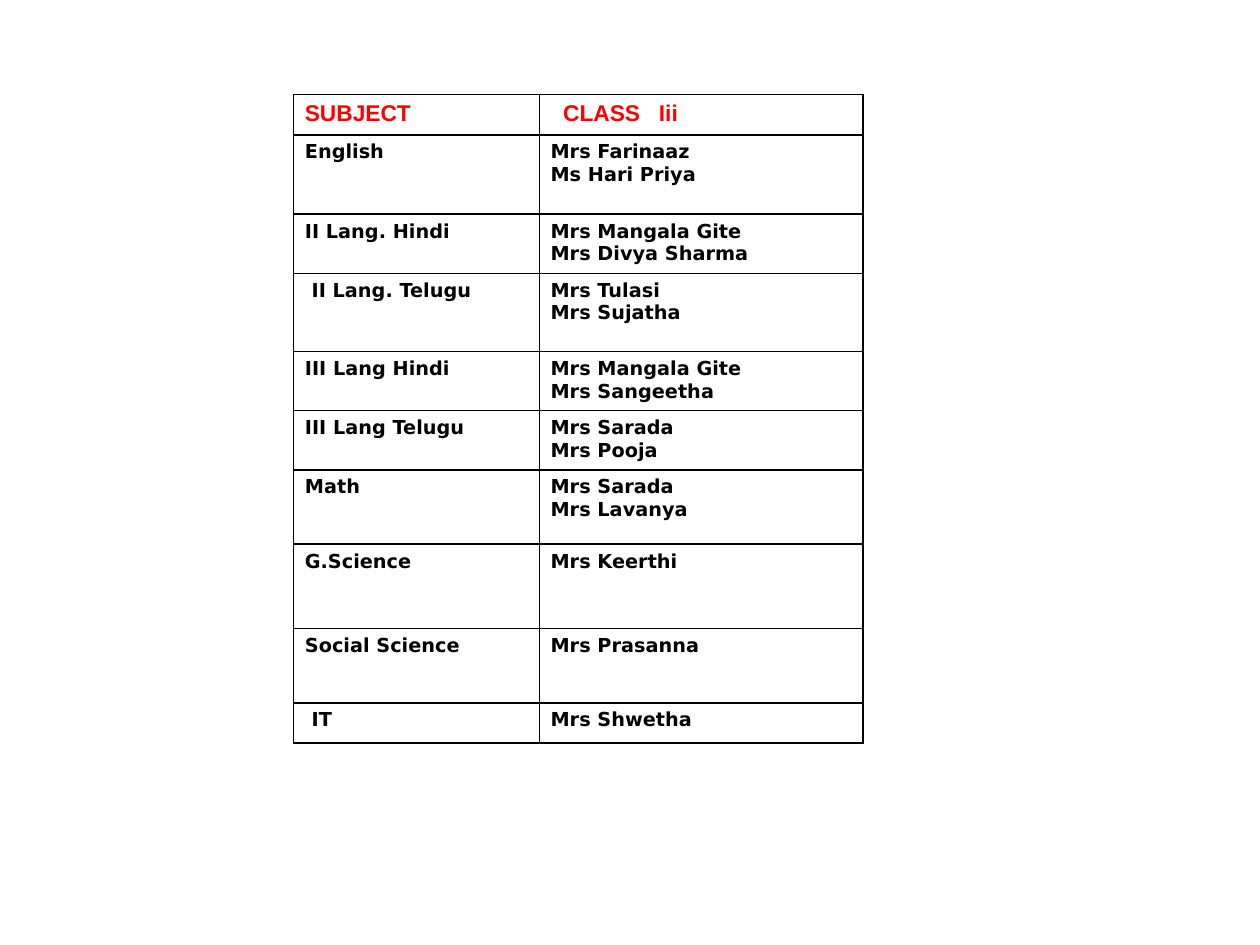
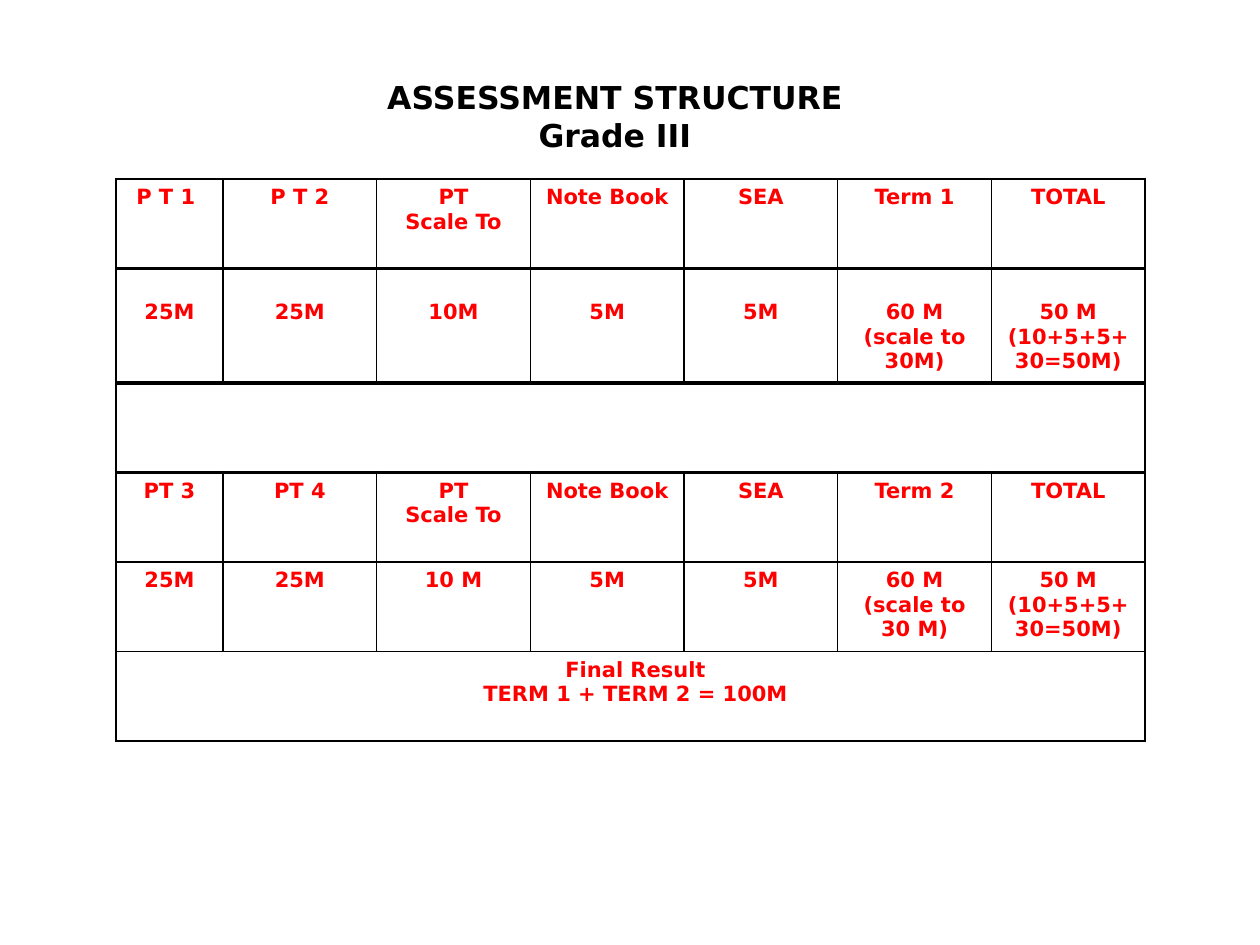
"""Builds two school slides: class III teachers and the assessment structure."""
from dataclasses import dataclass

from lxml import etree
from pptx import Presentation
from pptx import util as u
from pptx.dml.color import RGBColor
from pptx.enum import text
from pptx.oxml.ns import qn


@dataclass(frozen=True)
class Theme:
    ink: str = "000000"
    accent: str = "FF0000"
    body_font: str = "DejaVu Sans"
    heading_font: str = "Arial"
    title_size: int = 18
    heading_size: int = 13
    teacher_size: int = 11
    marks_size: int = 12
    thin: int = 1
    thick: int = 2


THEME = Theme()
TEACHERS = [
    ("SUBJECT", "CLASS\tIii"),
    ("English", "Mrs Farinaaz\nMs Hari Priya"),
    ("II Lang. Hindi", "Mrs Mangala Gite\nMrs Divya Sharma"),
    (" II Lang. Telugu", "Mrs Tulasi\nMrs Sujatha"),
    ("III Lang Hindi", "Mrs Mangala Gite\nMrs Sangeetha"),
    ("III Lang Telugu", "Mrs Sarada\nMrs Pooja"),
    ("Math", "Mrs Sarada\nMrs Lavanya"),
    ("G.Science", "Mrs Keerthi"),
    ("Social Science", "Mrs Prasanna"),
    (" IT", "Mrs Shwetha"),
]
TEACHER_COLUMNS = [1.95, 2.57]
TEACHER_ROWS = [0.32, 0.63, 0.47, 0.62, 0.47, 0.47, 0.59, 0.67, 0.59, 0.32]
CLASS_INDENT, CLASS_TAB = 0.19, 0.76

ASSESSMENT_TITLE = "ASSESSMENT STRUCTURE\nGrade III"
SHARED_PARTS = ("PT\nScale To", "Note Book", "SEA")
TOTAL_MARKS = "50 M\n(10+5+5+30=50M)"
ASSESSMENT = [
    ("P T 1", "P T 2", *SHARED_PARTS, "Term 1", "TOTAL"),
    ("25M", "25M", "10M", "5M", "5M", "60 M\n(scale to 30M)", TOTAL_MARKS),
    ("",),
    ("PT 3", "PT 4", *SHARED_PARTS, "Term 2", "TOTAL"),
    ("25M", "25M", "10 M", "5M", "5M", "60 M\n(scale to 30 M)", TOTAL_MARKS),
    ("Final Result\nTERM 1 + TERM 2 = 100M",),
]
ASSESSMENT_COLUMNS = [0.85] + [1.22] * 6
ASSESSMENT_ROWS = [0.71, 0.91] + [0.71] * 4
ASSESSMENT_RULES = [THEME.thin] + [THEME.thick] * 3 + [THEME.thin] * 3
FIRST_TERM_TOP = 0.25


def style_text(frame, font, size, color, align):
    """Formats every paragraph and run of a text frame."""
    for paragraph in frame.paragraphs:
        paragraph.alignment = align
        for run in paragraph.runs:
            run.font.name = font
            run.font.size = u.Pt(size)
            run.font.bold = True
            run.font.color.rgb = RGBColor.from_string(color)


def draw_borders(cell, top, bottom):
    """Gives a cell thin sides and the given top and bottom rules."""
    properties = cell._tc.get_or_add_tcPr()
    sides = {"lnL": THEME.thin, "lnR": THEME.thin, "lnT": top, "lnB": bottom}
    for side, width in sides.items():
        line = etree.SubElement(properties, qn(f"a:{side}"), w=str(u.Pt(width)))
        fill = etree.SubElement(line, qn("a:solidFill"))
        etree.SubElement(fill, qn("a:srgbClr"), val=THEME.ink)


def add_grid(slide, left, top, columns, rows, content, rules, style_for):
    """Adds a ruled table; a one-cell row spans all columns."""
    table = slide.shapes.add_table(
        len(rows), len(columns), u.Inches(left), u.Inches(top),
        u.Inches(sum(columns)), u.Inches(sum(rows))).table
    table.first_row = table.horz_banding = False
    for column, width in zip(table.columns, columns):
        column.width = u.Inches(width)
    for r, (height, entries) in enumerate(zip(rows, content)):
        table.rows[r].height = u.Inches(height)
        for c in range(len(columns)):
            cell = table.cell(r, c)
            draw_borders(cell, rules[r], rules[r + 1])
            cell.fill.background()
        if len(entries) == 1:
            table.cell(r, 0).merge(table.cell(r, len(columns) - 1))
        for c, entry in enumerate(entries):
            cell = table.cell(r, c)
            cell.text_frame.text = entry
            style_text(cell.text_frame, *style_for(r))
    return table


def teacher_style(row):
    """Returns the text style of a row of teachers."""
    left = text.PP_ALIGN.LEFT
    if row == 0:
        return THEME.heading_font, THEME.heading_size, THEME.accent, left
    return THEME.body_font, THEME.teacher_size, THEME.ink, left


def marks_style(row):
    """Returns the text style of a row of marks."""
    return THEME.body_font, THEME.marks_size, THEME.accent, text.PP_ALIGN.CENTER


def build_teachers(deck):
    """Adds the slide of subjects and teachers."""
    slide = deck.slides.add_slide(deck.slide_layouts[6])
    table = add_grid(slide, 2.33, 0.75, TEACHER_COLUMNS, TEACHER_ROWS, TEACHERS,
                     [THEME.thin] * (len(TEACHERS) + 1), teacher_style)
    for cell in table.iter_cells():
        cell.margin_left = cell.margin_right = u.Inches(0.09)
    class_heading = table.cell(0, 1)
    class_heading.margin_left = u.Inches(CLASS_INDENT)
    properties = class_heading.text_frame.paragraphs[0]._p.get_or_add_pPr()
    tabs = etree.SubElement(properties, qn("a:tabLst"))
    etree.SubElement(tabs, qn("a:tab"), pos=str(u.Inches(CLASS_TAB)), algn="l")


def build_assessment(deck):
    """Adds the slide of the assessment structure."""
    slide = deck.slides.add_slide(deck.slide_layouts[5])
    title = slide.shapes.title
    title.left, title.top, title.width, title.height = map(
        u.Inches, (0.92, 0.57, 7.92, 1.31))
    frame = title.text_frame
    frame.text = ASSESSMENT_TITLE
    frame.word_wrap = True
    frame.auto_size = text.MSO_AUTO_SIZE.NONE
    frame.vertical_anchor = text.MSO_ANCHOR.TOP
    style_text(frame, THEME.body_font, THEME.title_size, THEME.ink,
               text.PP_ALIGN.CENTER)
    table = add_grid(slide, 0.92, 1.42, ASSESSMENT_COLUMNS, ASSESSMENT_ROWS,
                     ASSESSMENT, ASSESSMENT_RULES, marks_style)
    for c in range(len(ASSESSMENT_COLUMNS)):
        table.cell(1, c).margin_top = u.Inches(FIRST_TERM_TOP)
    table.cell(0, 0).margin_right = u.Inches(0.16)
    table.cell(len(ASSESSMENT) - 1, 0).margin_left = u.Inches(0.18)


def main():
    """Builds and saves the deck."""
    deck = Presentation()
    deck.slide_width, deck.slide_height = u.Inches(10), u.Inches(7.5)
    build_teachers(deck)
    build_assessment(deck)
    deck.save("out.pptx")


if __name__ == "__main__":
    main()
